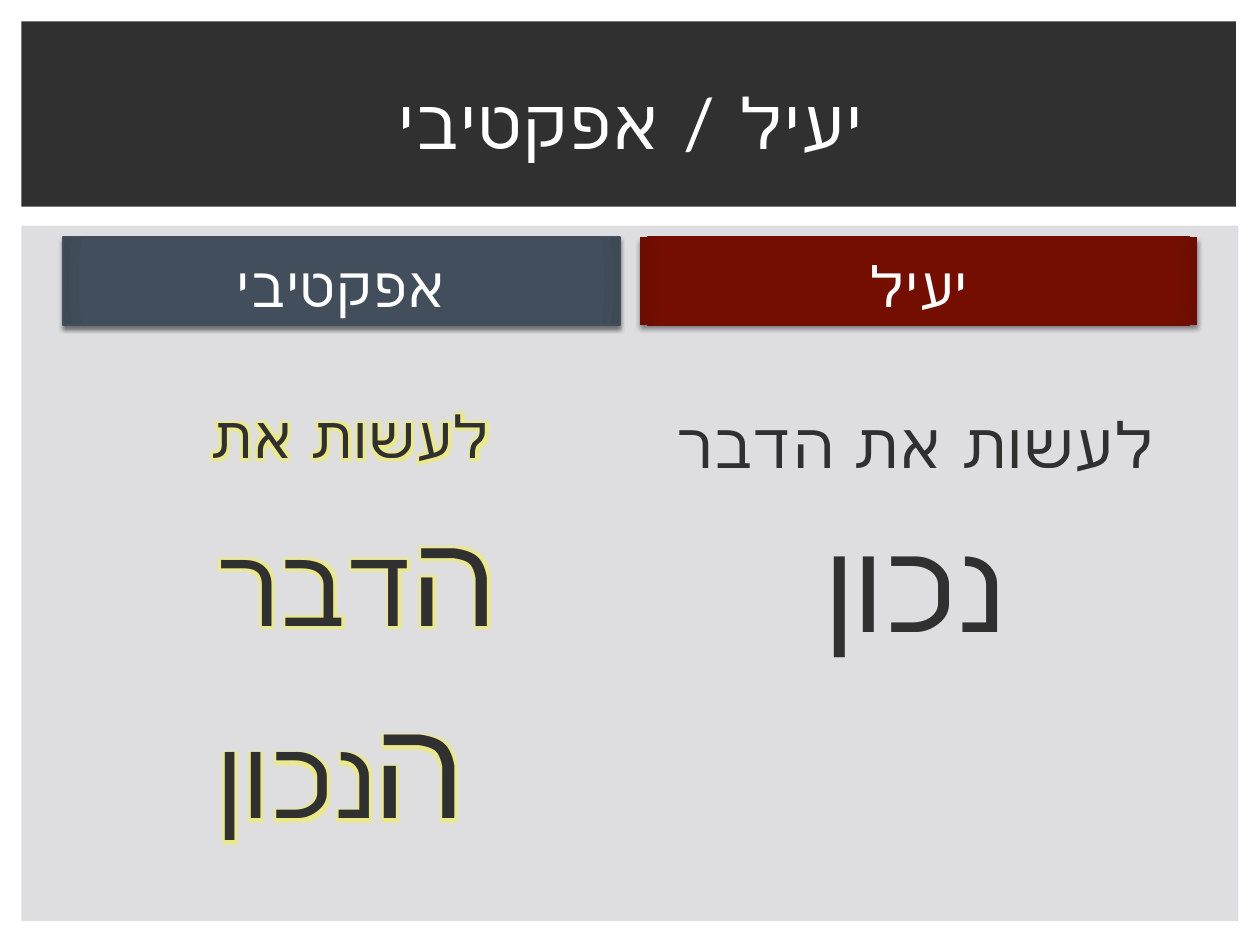
from dataclasses import dataclass

from lxml import etree
from pptx import Presentation
from pptx.dml.color import RGBColor
from pptx.enum.shapes import MSO_SHAPE
from pptx.enum.text import MSO_ANCHOR, MSO_AUTO_SIZE, PP_ALIGN
from pptx.oxml import parse_xml
from pptx.oxml.ns import qn
from pptx.util import Inches, Pt

RECT = MSO_SHAPE.RECTANGLE
CENTER = PP_ALIGN.CENTER
TOP, MIDDLE, BOTTOM = MSO_ANCHOR.TOP, MSO_ANCHOR.MIDDLE, MSO_ANCHOR.BOTTOM
NO_FIT = MSO_AUTO_SIZE.NONE
NS = 'xmlns:a="http://schemas.openxmlformats.org/drawingml/2006/main"'

FONT = "Lato"
WHITE, DARK, PANEL, GLOW = "FFFFFF", "303030", "DEDEE0", "F0EC70"

# Two-column grid, in inches
COL_LEFT, COL_W, COL_STEP = 0.5, 4.42, 4.58
HEAD_TOP, HEAD_H = 1.88, 0.7
BODY_TOP, BODY_H = 2.67, 4.03


@dataclass
class Column:
    col: int
    heading: str
    fill: str
    edge: str
    shadow_blur: float
    shadow_alpha: int
    lines: list  # each line is a list of (text, size)
    top_inset: float
    indent: float = 0
    outline: str = ""
    glow: str = ""


COLUMNS = [
    Column(0, "אפקטיבי", "424E5B", "3D4955", 2.5, 50,
           [[("לעשות את ", 33.3)],
            [("ה", 74), ("דבר ", 62.9)],
            [("ה", 79.5), ("נכון", 62.9)]],
           top_inset=0.51, outline="424E5B", glow=GLOW),
    Column(1, "יעיל", "730E00", "6B0D00", 3, 45,
           [[("לעשות את הדבר", 36)], [("נכון", 72)]],
           top_inset=0.55, indent=0.05),
]


def rgb(hex_color: str) -> RGBColor:
    return RGBColor.from_string(hex_color)


def place(sp, left: float, top: float, width: float, height: float) -> None:
    sp.left, sp.top = Inches(left), Inches(top)
    sp.width, sp.height = Inches(width), Inches(height)


def add_panel(s, layer: int, box: tuple, color: str) -> None:
    """Plain rectangle placed behind the placeholders."""
    sp = s.shapes.add_shape(RECT, *map(Inches, box))
    sp.shadow.inherit = False
    sp.fill.solid()
    sp.fill.fore_color.rgb = rgb(color)
    sp.line.fill.background()
    s.shapes._spTree.insert(2 + layer, sp._element)


def add_run(p, text: str, *, size: float, color: str, spacing: float = 1.5,
            glow: str = "") -> None:
    r = p.add_run()
    r.text = text
    font = r.font
    font.size, font.bold = Pt(size), False
    font.color.rgb = rgb(color)
    font.name = FONT
    rpr = r._r.get_or_add_rPr()
    rpr.set("spc", str(int(spacing * 100)))
    etree.SubElement(rpr, qn("a:cs")).set("typeface", FONT)
    if glow:
        rpr.find(qn("a:solidFill")).addnext(parse_xml(
            f'<a:effectLst {NS}><a:glow rad="63500"><a:srgbClr val="{glow}">'
            '<a:alpha val="80000"/></a:srgbClr></a:glow></a:effectLst>'))


def write(sp, lines: list, *, anchor, color: str, rtl: bool = False,
          indent: float = 0, top_inset: float = 0.05, **run_format) -> None:
    tf = sp.text_frame
    tf.word_wrap, tf.auto_size, tf.vertical_anchor = True, NO_FIT, anchor
    tf.margin_top = Inches(top_inset)
    for i, line in enumerate(lines):
        p = tf.paragraphs[0] if i == 0 else tf.add_paragraph()
        ppr = p._p.get_or_add_pPr()
        ppr.set("marL", str(Inches(indent)))
        ppr.set("indent", "0")
        if rtl:
            ppr.set("rtl", "1")
        etree.SubElement(ppr, qn("a:buNone"))
        p.alignment = CENTER
        if i == 0:
            p.space_before = Pt(0)
        for text, size in line:
            add_run(p, text, size=size, color=color, **run_format)


def style_heading(sp, c: Column) -> None:
    """Radial fill, outline and soft shadow of a column heading."""
    stops = "".join(
        f'<a:gs pos="{pos * 1000}"><a:srgbClr val="{color}"/></a:gs>'
        for pos, color in ((0, c.fill), (90, c.fill), (100, c.edge)))
    sp._element.spPr.append(parse_xml(
        f'<a:gradFill {NS} rotWithShape="1"><a:gsLst>{stops}</a:gsLst>'
        '<a:path path="circle"><a:fillToRect l="100000" t="100000" '
        'r="100000" b="100000"/></a:path></a:gradFill>'))
    if c.outline:
        sp.line.color.rgb = rgb(c.outline)
        sp.line.width = Pt(0.79)
    else:
        sp.line.fill.background()
    sp._element.spPr.append(parse_xml(
        f'<a:effectLst {NS}><a:outerShdw blurRad="{Pt(c.shadow_blur)}" '
        f'dist="{Pt(2)}" dir="5400000" rotWithShape="0">'
        f'<a:srgbClr val="000000"><a:alpha val="{c.shadow_alpha * 1000}"/>'
        '</a:srgbClr></a:outerShdw></a:effectLst>'))


def fill_column(s, c: Column) -> None:
    left = COL_LEFT + c.col * COL_STEP
    heading = s.placeholders[1 + 2 * c.col]
    place(heading, left, HEAD_TOP, COL_W, HEAD_H)
    style_heading(heading, c)
    write(heading, [[(c.heading, 32)]], anchor=BOTTOM, color=WHITE)

    body = s.placeholders[2 + 2 * c.col]
    place(body, left, BODY_TOP, COL_W, BODY_H)
    write(body, c.lines, anchor=TOP, color=DARK, rtl=True, indent=c.indent,
          top_inset=c.top_inset, glow=c.glow)


def main() -> None:
    prs = Presentation()
    prs.slide_width, prs.slide_height = Inches(10), Inches(7.5)
    s = prs.slides.add_slide(prs.slide_layouts.get_by_name("Comparison"))

    # Background panels
    add_panel(s, 0, (0.17, 1.79, 9.66, 5.52), PANEL)
    add_panel(s, 1, (0.17, 0.17, 9.64, 1.47), DARK)

    # Title
    title = s.shapes.title
    place(title, 0.42, 0.39, 9.17, 1.15)
    write(title, [[("יעיל / אפקטיבי", 40)]], anchor=MIDDLE, color=WHITE,
          spacing=2)

    # Compared columns
    for column in COLUMNS:
        fill_column(s, column)

    prs.save("out.pptx")


if __name__ == "__main__":
    main()
